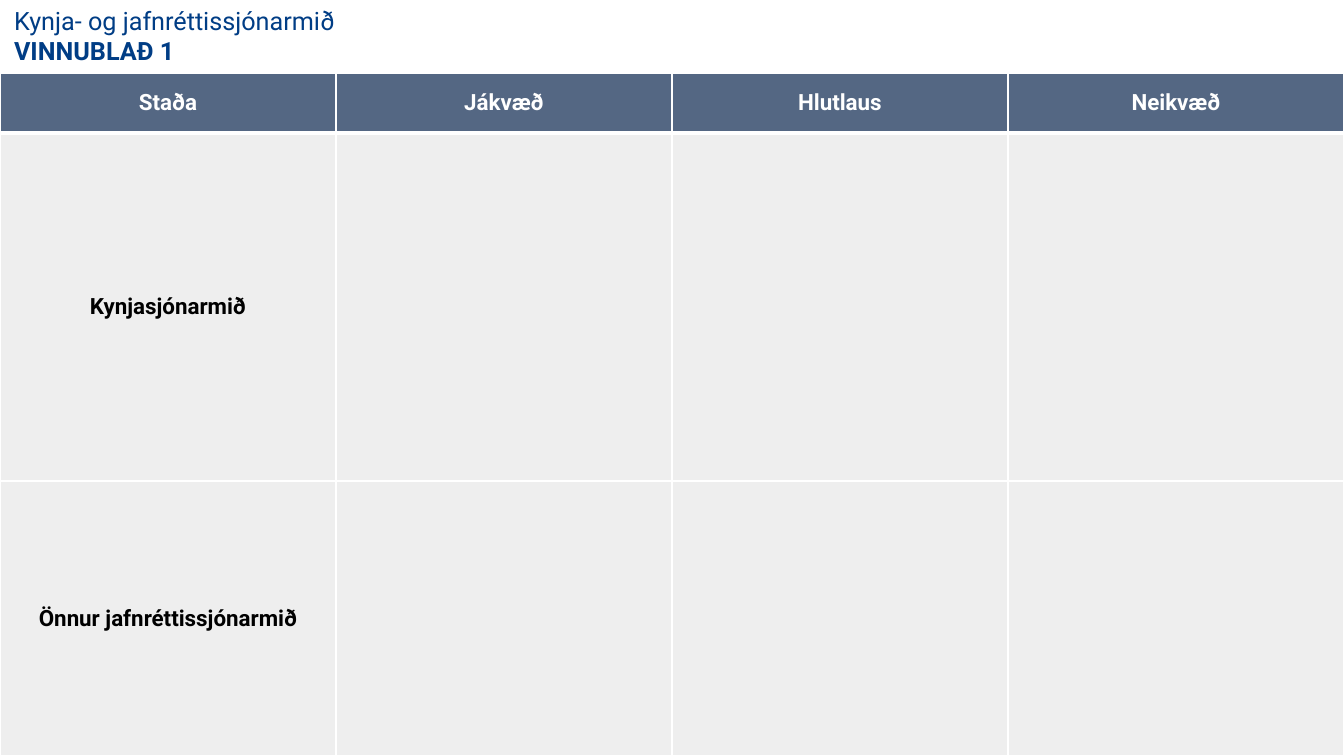
"""Build the gender and equality perspectives worksheet slide."""
from lxml import etree
from pptx import Presentation
from pptx.dml.color import RGBColor
from pptx.enum.text import MSO_ANCHOR, MSO_AUTO_SIZE, PP_ALIGN
from pptx.oxml.ns import qn
from pptx.util import Emu, Pt

TOP, MIDDLE = MSO_ANCHOR.TOP, MSO_ANCHOR.MIDDLE
LEFT, CENTER = PP_ALIGN.LEFT, PP_ALIGN.CENTER
NO_FIT = MSO_AUTO_SIZE.NONE

TITLE = [("Kynja- og jafnréttissjónarmið", False), ("VINNUBLAÐ 1", True)]
ROWS = [
    ["Staða", "Jákvæð", "Hlutlaus", "Neikvæð"],
    ["Kynjasjónarmið", "", "", ""],
    ["Önnur jafnréttissjónarmið", "", "", ""],
]
COLORS = {"title": "003D85", "header": "546783", "body": "EEEEEE",
          "light": "FFFFFF", "dark": "000000"}
FONT = "Roboto"
SLIDE_W, SLIDE_H = 1344, 756
TITLE_BOX = (4, 0, 564, 72)
TABLE_TOP = 73
ROW_HEIGHTS = [60, 348, 275]
CELL_FORMAT = {"margin_left": 7, "margin_right": 7, "margin_top": 4, "margin_bottom": 4}
TITLE_FORMAT = {"margin_left": 10, "margin_right": 10, "margin_top": 5, "margin_bottom": 5}
THIN, THICK = 1, 3


def px(n):
    return Emu(round(n * 12192000 / SLIDE_W))


def set_margins(target, margins):
    for name, value in margins.items():
        setattr(target, name, px(value))


def write(p, text, size, color, bold, align):
    p.alignment = align
    r = p.add_run()
    r.text = text
    for name, value in {"name": FONT, "size": Pt(size), "bold": bold}.items():
        setattr(r.font, name, value)
    r.font.color.rgb = RGBColor.from_string(COLORS[color])


def set_borders(cell, widths):
    tc_pr = cell._tc.get_or_add_tcPr()
    for i, (side, width) in enumerate(widths.items()):
        ln = etree.Element(qn(f"a:ln{side}"), w=str(Pt(width)))
        fill = etree.SubElement(ln, qn("a:solidFill"))
        etree.SubElement(fill, qn("a:srgbClr"), val=COLORS["light"])
        tc_pr.insert(i, ln)


def add_title(slide):
    sp = slide.shapes.title
    sp.left, sp.top, sp.width, sp.height = map(px, TITLE_BOX)
    tf = sp.text_frame
    set_margins(tf, TITLE_FORMAT)
    for name, value in {"word_wrap": True, "auto_size": NO_FIT, "vertical_anchor": TOP}.items():
        setattr(tf, name, value)
    for i, (text, bold) in enumerate(TITLE):
        p = tf.add_paragraph() if i else tf.paragraphs[0]
        write(p, text, 18, "title", bold, LEFT)


def add_worksheet(slide):
    n_rows, n_cols = len(ROWS), len(ROWS[0])
    table = slide.shapes.add_table(n_rows, n_cols, 0, px(TABLE_TOP), px(SLIDE_W),
                                   px(sum(ROW_HEIGHTS))).table
    for col in table.columns:
        col.width = px(SLIDE_W / n_cols)
    for i, (texts, height) in enumerate(zip(ROWS, ROW_HEIGHTS)):
        table.rows[i].height = px(height)
        fill, color = ("body", "dark") if i else ("header", "light")
        borders = {"L": THIN, "R": THIN, "T": THICK if i == 1 else THIN,
                   "B": THIN if i else THICK}
        for j, text in enumerate(texts):
            cell = table.cell(i, j)
            cell.fill.solid()
            cell.fill.fore_color.rgb = RGBColor.from_string(COLORS[fill])
            set_borders(cell, borders)
            set_margins(cell, CELL_FORMAT)
            cell.vertical_anchor = MIDDLE
            if text:
                write(cell.text_frame.paragraphs[0], text, 16, color, True, CENTER)


def main():
    prs = Presentation()
    prs.slide_width, prs.slide_height = px(SLIDE_W), px(SLIDE_H)
    slide = prs.slides.add_slide(prs.slide_layouts[5])
    add_title(slide)
    add_worksheet(slide)
    prs.save("out.pptx")


if __name__ == "__main__":
    main()
